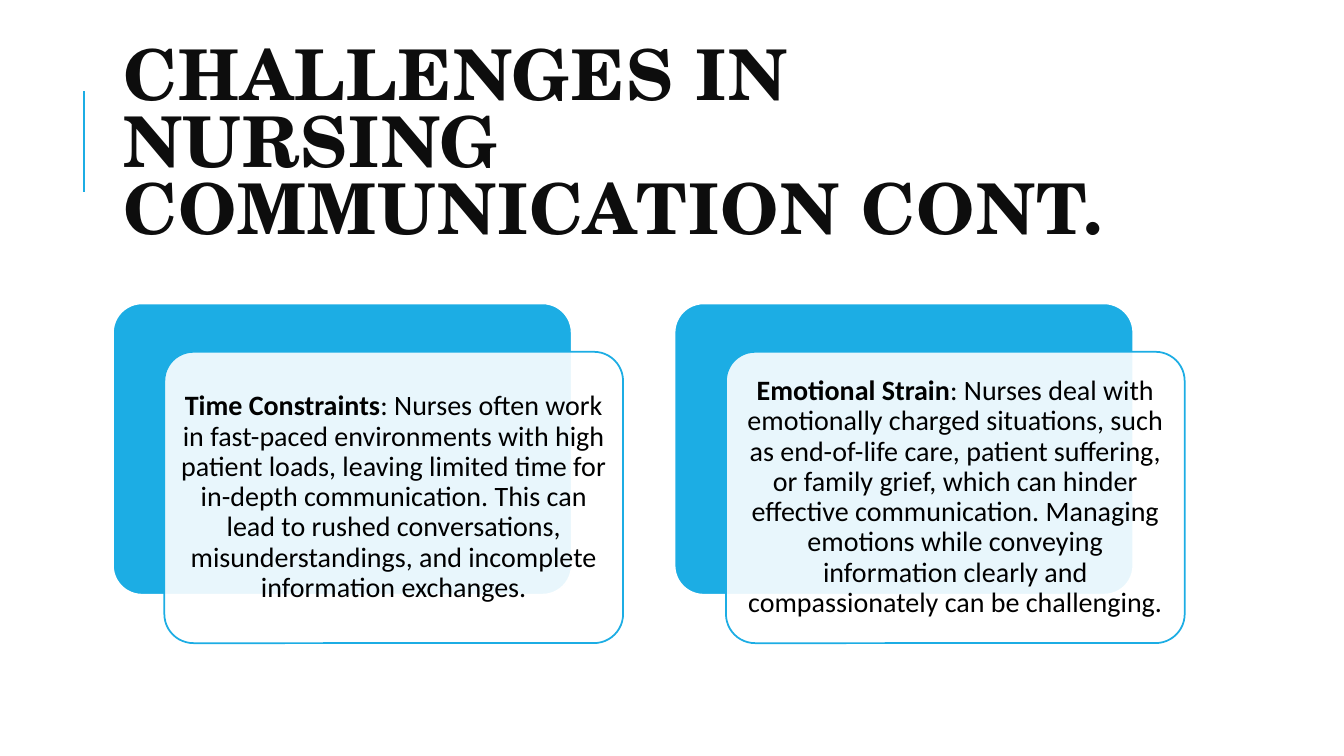
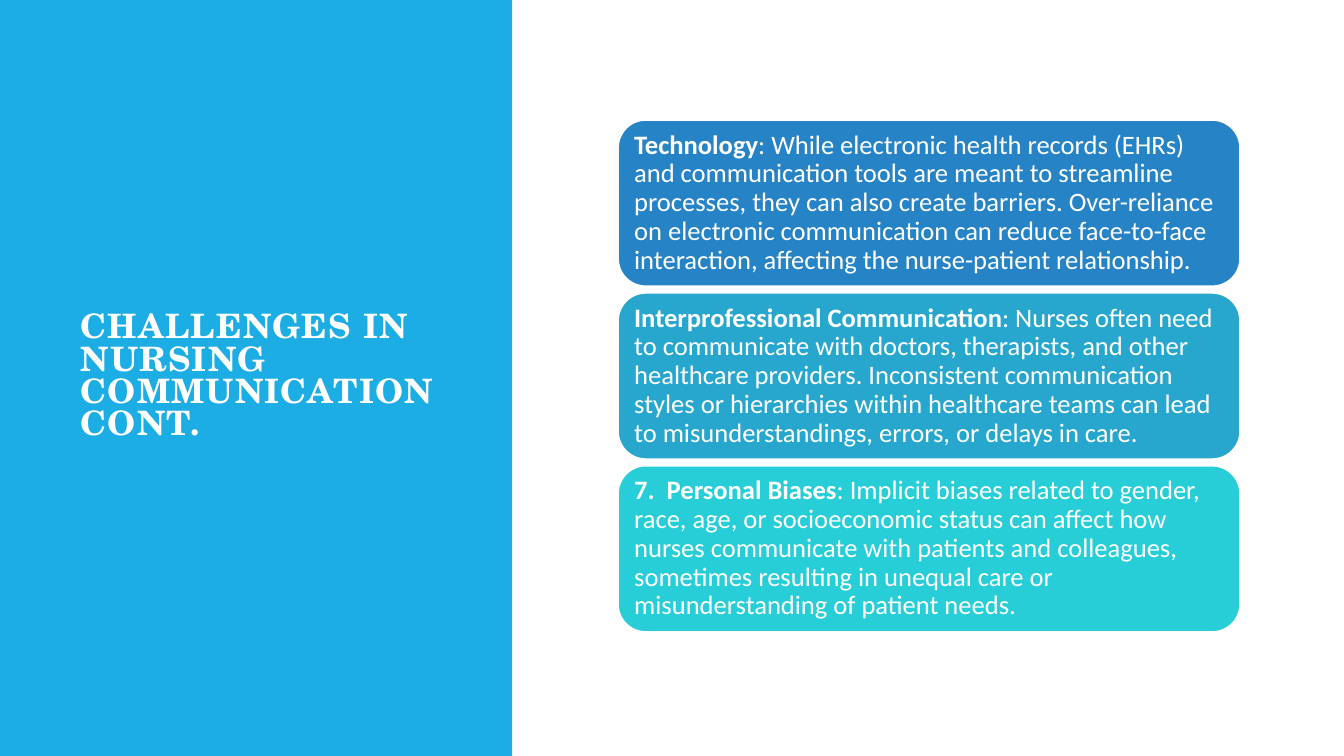
"""Build two slides on challenges in nursing communication."""
from lxml import etree
from pptx import Presentation
from pptx.dml.color import RGBColor
from pptx.enum.shapes import MSO_CONNECTOR, MSO_SHAPE
from pptx.enum.text import MSO_ANCHOR, MSO_AUTO_SIZE, PP_ALIGN
from pptx.oxml.ns import qn
from pptx.util import Inches, Pt

RECT, ROUND = MSO_SHAPE.RECTANGLE, MSO_SHAPE.ROUNDED_RECTANGLE
LEFT, CENTER = PP_ALIGN.LEFT, PP_ALIGN.CENTER
MIDDLE, NO_FIT = MSO_ANCHOR.MIDDLE, MSO_AUTO_SIZE.NONE
STRAIGHT = MSO_CONNECTOR.STRAIGHT

COLORS = {"accent": "1CADE4", "white": "FFFFFF", "black": "000000", "title": "0D0D0D",
          "blue": "2683C6", "ocean": "27A7CE", "turquoise": "27CED7"}
TITLE_FONT, BODY_FONT = "TeX Gyre Schola", "Calibri"
WIDTH, HEIGHT = 13.33, 7.5
INSET = 0.08

TITLE = "CHALLENGES IN NURSING COMMUNICATION CONT."
CARDS = [
    ("Time Constraints", ": Nurses often work in fast-paced environments with high patient "
     "loads, leaving limited time for in-depth communication. This can lead to rushed "
     "conversations, misunderstandings, and incomplete information exchanges."),
    ("Emotional Strain", ": Nurses deal with emotionally charged situations, such as "
     "end-of-life care, patient suffering, or family grief, which can hinder effective "
     "communication. Managing emotions while conveying information clearly and "
     "compassionately can be challenging."),
]
BARS = [
    ("blue", "Technology", ": While electronic health records (EHRs) and communication tools "
     "are meant to streamline processes, they can also create barriers. Over-reliance on "
     "electronic communication can reduce face-to-face interaction, affecting the "
     "nurse-patient relationship."),
    ("ocean", "Interprofessional Communication", ": Nurses often need to communicate with "
     "doctors, therapists, and other healthcare providers. Inconsistent communication styles "
     "or hierarchies within healthcare teams can lead to misunderstandings, errors, or delays "
     "in care."),
    ("turquoise", "7.  Personal Biases", ": Implicit biases related to gender, race, age, or "
     "socioeconomic status can affect how nurses communicate with patients and colleagues, "
     "sometimes resulting in unequal care or misunderstanding of patient needs."),
]


def rgb(name):
    """Return a palette colour."""
    return RGBColor.from_string(COLORS[name])


def add_run(p, text, font, size, color, bold):
    """Append a formatted run and return it."""
    r = p.add_run()
    r.text = text
    r.font.name, r.font.size, r.font.bold = font, Pt(size), bold
    r.font.color.rgb = rgb(color)
    return r


def add_titled_slide(prs, box, size, color):
    """Add a slide whose title placeholder fills the given box."""
    s = prs.slides.add_slide(prs.slide_layouts[5])
    sp = s.shapes.title
    sp.left, sp.top, sp.width, sp.height = map(Inches, box)
    tf = sp.text_frame
    tf.word_wrap, tf.auto_size, tf.vertical_anchor = True, NO_FIT, MIDDLE
    p = tf.paragraphs[0]
    p.alignment, p.line_spacing = LEFT, 0.8
    r = add_run(p, TITLE, TITLE_FONT, size, color, True)
    r.font._element.set("spc", "100")
    return s


def add_block(s, kind, box, fill, line=None, radius=None, alpha=None):
    """Add a flat preset shape."""
    sp = s.shapes.add_shape(kind, *map(Inches, box))
    sp.shadow.inherit = False
    sp.fill.solid()
    sp.fill.fore_color.rgb = rgb(fill)
    if alpha:
        color = sp.fill._xPr.find(".//" + qn("a:srgbClr"))
        etree.SubElement(color, qn("a:alpha"), val=str(alpha * 1000))
    if line:
        sp.line.color.rgb = rgb(line)
        sp.line.width = Pt(1.25)
    else:
        sp.line.fill.background()
    if radius:
        sp.adjustments[0] = radius
    return sp


def write_point(sp, head, text, size, color, align):
    """Write a bold heading and its explanation into a shape."""
    tf = sp.text_frame
    tf.word_wrap, tf.vertical_anchor = True, MIDDLE
    tf.margin_left = tf.margin_right = tf.margin_top = tf.margin_bottom = Inches(INSET)
    p = tf.paragraphs[0]
    p.alignment, p.line_spacing = align, 0.9
    add_run(p, head, BODY_FONT, size, color, True)
    add_run(p, text, BODY_FONT, size, color, False)


def build_cards(prs):
    """Build the slide with two overlapping card pairs."""
    s = add_titled_slide(prs, (1.12, 0.64, 10.63, 1.64), 50, "title")
    rule = s.shapes.add_connector(STRAIGHT, *map(Inches, (0.83, 1.9, 0.83, 0.9)))
    rule.line.color.rgb = rgb("accent")
    rule.line.width = Pt(1.5)
    etree.SubElement(rule._element.spPr, qn("a:effectLst"))
    left, top, width, height = 1.12, 3.01, 4.55, 2.89
    pitch, shift_x, shift_y = 5.57, 0.51, 0.48
    for i, (head, text) in enumerate(CARDS):
        x = left + i * pitch
        add_block(s, ROUND, (x, top, width, height), "accent", "white", 0.1)
        card = add_block(s, ROUND, (x + shift_x, top + shift_y, width, height),
                         "white", "accent", 0.1, 90)
        write_point(card, head, text, 20, "black", CENTER)


def build_bars(prs):
    """Build the slide with a side panel and stacked bars."""
    s = add_titled_slide(prs, (0.7, 0.7, 3.74, 6.09), 24, "white")
    panel = add_block(s, RECT, (0, 0, 5.08, HEIGHT), "accent")
    s.shapes.title._element.addprevious(panel._element)
    left, top, width, height, span = 6.13, 1.19, 6.17, 1.65, 5.08
    pitch = (span - height) / (len(BARS) - 1)
    for i, (fill, head, text) in enumerate(BARS):
        bar = add_block(s, ROUND, (left, top + i * pitch, width, height), fill, "white")
        write_point(bar, head, text, 19, "white", LEFT)


def main():
    """Assemble and save the presentation."""
    prs = Presentation()
    prs.slide_width, prs.slide_height = Inches(WIDTH), Inches(HEIGHT)
    build_cards(prs)
    build_bars(prs)
    prs.save("out.pptx")


if __name__ == "__main__":
    main()
